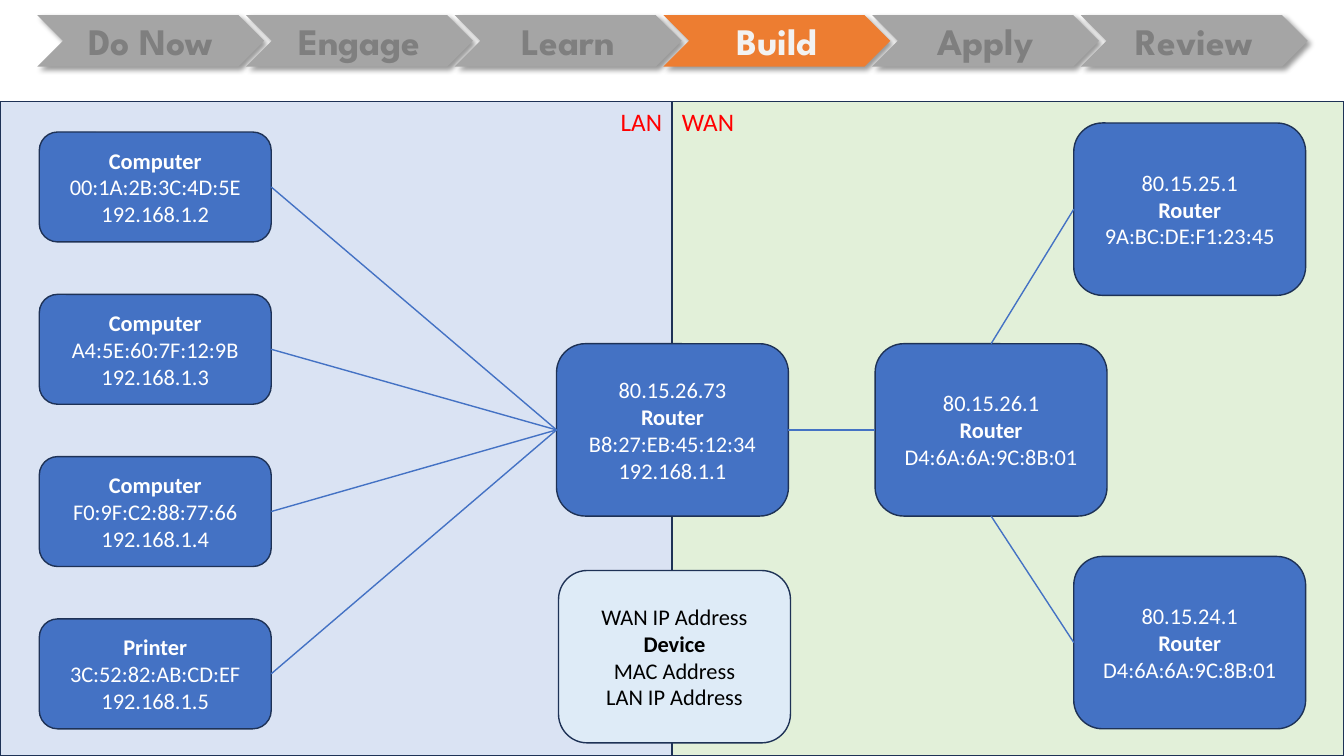
from lxml import etree
from pptx import Presentation
from pptx.dml.color import RGBColor
from pptx.enum import shapes, text
from pptx.oxml import ns
from pptx.util import Inches, Pt

COLORS = {
    "step": "A5A5A5", "step_text": "7F7F7F",
    "current": "ED7D31", "current_text": "F2F2F2",
    "lan": "DAE3F3", "wan": "E2F0D9", "zone_text": "FF0000",
    "device": "4472C4", "device_text": "FFFFFF",
    "legend": "DEEBF7", "legend_text": "000000",
    "outline": "1E3256", "link": "4472C4", "shadow": "000000",
}
STEPS = ["Do Now", "Engage", "Learn", "Build", "Apply", "Review"]
CURRENT_STEP = "Build"
HOSTS = [
    ("Computer", "00:1A:2B:3C:4D:5E", "192.168.1.2"),
    ("Computer", "A4:5E:60:7F:12:9B", "192.168.1.3"),
    ("Computer", "F0:9F:C2:88:77:66", "192.168.1.4"),
    ("Printer", "3C:52:82:AB:CD:EF", "192.168.1.5"),
]
BOLD_LINES = {"Computer", "Printer", "Router", "Device"}
NODE_WIDTH, ROUTER_HEIGHT, HOST_HEIGHT = 2.3, 1.71, 1.09
TOP, LEFT, BOTTOM, RIGHT = range(4)
SHAPE = shapes.MSO_SHAPE


def color(name):
    return RGBColor.from_string(COLORS[name])


def write(shape, lines, *, fill, size, font="Calibri", bold=BOLD_LINES,
          align=text.PP_ALIGN.CENTER, anchor=text.MSO_ANCHOR.MIDDLE):
    """Write one paragraph per line; lines listed in bold are bold."""
    frame = shape.text_frame
    frame.word_wrap = True
    frame.vertical_anchor = anchor
    for index, line in enumerate(lines):
        paragraph = frame.paragraphs[0] if index == 0 else frame.add_paragraph()
        paragraph.alignment = align
        run = paragraph.add_run()
        run.text = line
        run.font.name, run.font.size = font, Pt(size)
        run.font.bold = line in bold
        run.font.color.rgb = color(fill)


def add_box(slide, kind, box, fill, outline=None):
    shape = slide.shapes.add_shape(kind, *map(Inches, box))
    shape.shadow.inherit = False
    shape.fill.solid()
    shape.fill.fore_color.rgb = color(fill)
    if outline:
        shape.line.color.rgb = color(outline)
        shape.line.width = Pt(1)
    else:
        shape.line.fill.background()
    return shape


def add_shadow(shape):
    effects = shape._element.spPr.find(ns.qn("a:effectLst"))
    outer = etree.SubElement(effects, ns.qn("a:outerShdw"), blurRad=str(Pt(4)),
                             dist=str(Pt(3)), dir="2700000", algn="tl", rotWithShape="0")
    tint = etree.SubElement(outer, ns.qn("a:srgbClr"), val=COLORS["shadow"])
    etree.SubElement(tint, ns.qn("a:alpha"), val="40000")


def add_progress_bar(slide, left, top, width, height):
    """Lay overlapping chevrons evenly across the box."""
    chevron_width = 2.25
    pitch = (width - chevron_width) / (len(STEPS) - 1)
    for index, step in enumerate(STEPS):
        state = "current" if step == CURRENT_STEP else "step"
        chevron = add_box(slide, SHAPE.CHEVRON,
                          (left + index * pitch, top, chevron_width, height), state)
        add_shadow(chevron)
        write(chevron, [step], fill=state + "_text", size=26.7,
              font="League Spartan", bold=STEPS)


def add_zones(slide, left, top, width, height):
    half = width / 2
    for name, x, align in (("wan", left + half, text.PP_ALIGN.LEFT),
                           ("lan", left, text.PP_ALIGN.RIGHT)):
        zone = add_box(slide, SHAPE.RECTANGLE, (x, top, half, height), name, "outline")
        write(zone, [name.upper()], fill="zone_text", size=18, align=align,
              anchor=text.MSO_ANCHOR.TOP)


def add_node(slide, left, top, lines, height=ROUTER_HEIGHT, style="device"):
    node = add_box(slide, SHAPE.ROUNDED_RECTANGLE,
                   (left, top, NODE_WIDTH, height), style, "outline")
    write(node, lines, fill=style + "_text", size=16)
    return node


def link(slide, start, start_side, end, end_side):
    line = slide.shapes.add_connector(shapes.MSO_CONNECTOR.STRAIGHT, 0, 0, 0, 0)
    line.begin_connect(start, start_side)
    line.end_connect(end, end_side)
    line.line.color.rgb = color("link")
    line.line.width = Pt(1)
    etree.SubElement(line._element.spPr, ns.qn("a:effectLst"))


def add_network(slide, left, top, width, height):
    middle = top + 2.4
    gateway = add_node(slide, left + 5.52, middle,
                       ["80.15.26.73", "Router", "B8:27:EB:45:12:34", "192.168.1.1"])
    for index, lines in enumerate(HOSTS):
        host = add_node(slide, left + 0.39, top + 0.3 + index * 1.61, lines, HOST_HEIGHT)
        link(slide, host, RIGHT, gateway, LEFT)

    hub = add_node(slide, left + 8.68, middle,
                   ["80.15.26.1", "Router", "D4:6A:6A:9C:8B:01"])
    link(slide, gateway, RIGHT, hub, LEFT)
    remote_left = left + width - NODE_WIDTH - 0.38
    lower_top = top + height - ROUTER_HEIGHT - 0.27
    for remote_top, hub_side, lines in (
            (lower_top, BOTTOM, ["80.15.24.1", "Router", "D4:6A:6A:9C:8B:01"]),
            (top + 0.21, TOP, ["80.15.25.1", "Router", "9A:BC:DE:F1:23:45"])):
        remote = add_node(slide, remote_left, remote_top, lines)
        link(slide, hub, hub_side, remote, LEFT)

    add_node(slide, left + 5.54, top + 4.65,
             ["WAN IP Address", "Device", "MAC Address", "LAN IP Address"], style="legend")


def main():
    deck = Presentation()
    deck.slide_width, deck.slide_height = Inches(13.33), Inches(7.5)
    slide = deck.slides.add_slide(deck.slide_layouts[6])
    diagram = (0, 1.01, 13.33, 6.49)
    add_progress_bar(slide, 0.37, 0.15, 12.6, 0.51)
    add_zones(slide, *diagram)
    add_network(slide, *diagram)
    deck.save("out.pptx")


if __name__ == "__main__":
    main()
